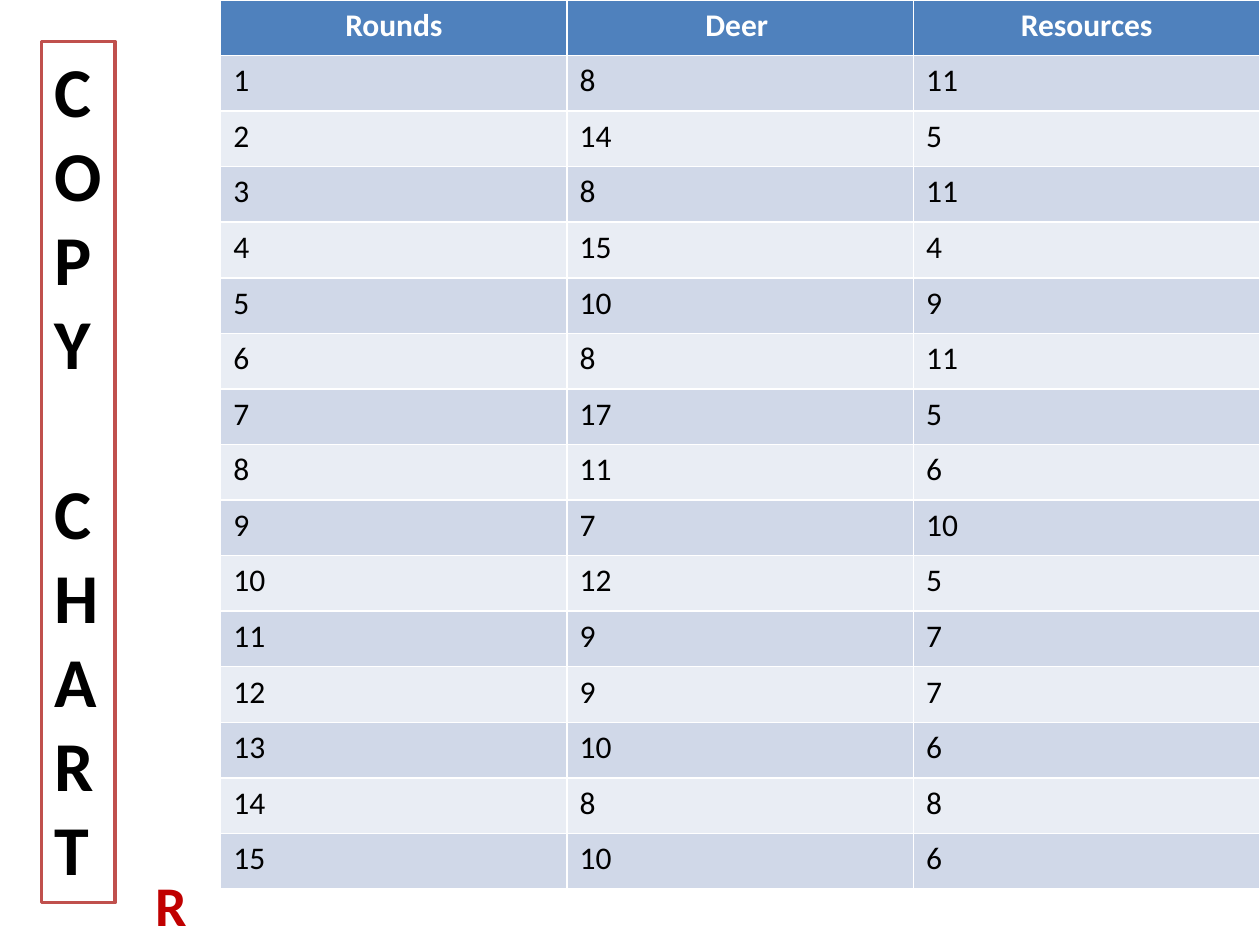
from pptx import Presentation
from pptx.dml.color import RGBColor
from pptx.enum.shapes import MSO_SHAPE
from pptx.enum.text import MSO_ANCHOR, MSO_AUTO_SIZE, PP_ALIGN
from pptx.util import Cm, Pt

RECT = MSO_SHAPE.RECTANGLE
TOP = MSO_ANCHOR.TOP
GROW = MSO_AUTO_SIZE.SHAPE_TO_FIT_TEXT
LEFT, MID = PP_ALIGN.LEFT, PP_ALIGN.CENTER

FONT = "Calibri"
HUES = {
    "head": "4F81BD",
    "odd": "D0D8E8",
    "even": "E9EDF4",
    "edge": "C0504D",
    "red": "C00000",
    "white": "FFFFFF",
    "black": "000000",
}
HEADS = ("Rounds", "Deer ", "Resources")
DEER = (8, 14, 8, 15, 10, 8, 17, 11, 7, 12, 9, 9, 10, 8, 10)
STOCK = (11, 5, 11, 4, 9, 11, 5, 6, 10, 5, 7, 7, 6, 8, 6)


def hue(name):
    return RGBColor.from_string(HUES[name])


def write(para, text, size=18, color="black", bold=False, align=LEFT, before=0):
    para.alignment = align
    para.space_before = Pt(before)
    run = para.add_run()
    run.text = text
    font = run.font
    font.name, font.size, font.bold = FONT, Pt(size), bold
    font.color.rgb = hue(color)


def add_grid(slide, left, top, width, height):
    rounds = range(1, len(DEER) + 1)
    rows = [HEADS, *zip(rounds, DEER, STOCK)]
    frame = slide.shapes.add_table(
        len(rows), len(HEADS), Cm(left), Cm(top), Cm(width), Cm(height)
    )
    for i, row in enumerate(rows):
        if i == 0:
            fill, look = "head", {"color": "white", "bold": True, "align": MID}
        else:
            fill, look = ("odd" if i % 2 else "even"), {}
        for j, value in enumerate(row):
            cell = frame.table.cell(i, j)
            cell.fill.solid()
            cell.fill.fore_color.rgb = hue(fill)
            write(cell.text_frame.paragraphs[0], str(value), **look)


def add_banner(slide, left, top, width, height, words):
    box = slide.shapes.add_shape(RECT, Cm(left), Cm(top), Cm(width), Cm(height))
    box.shadow.inherit = False
    box.fill.solid()
    box.fill.fore_color.rgb = hue("white")
    box.line.color.rgb = hue("edge")
    box.line.width = Pt(2)
    frame = box.text_frame
    frame.word_wrap = False
    frame.auto_size = GROW
    frame.vertical_anchor = TOP
    para = frame.paragraphs[0]
    for i, word in enumerate(words):
        for j, char in enumerate(word):
            if i or j:
                para = frame.add_paragraph()
            gap = 48.8 if i and j == 0 else 0
            write(para, char, size=40, bold=True, before=gap)


def add_mark(slide, left, top, width, height, text):
    box = slide.shapes.add_textbox(Cm(left), Cm(top), Cm(width), Cm(height))
    frame = box.text_frame
    frame.word_wrap = True
    frame.auto_size = GROW
    write(frame.paragraphs[0], text, size=32, color="red", bold=True, align=MID)


def main():
    deck = Presentation()
    deck.slide_width, deck.slide_height = Cm(25.4), Cm(19.05)
    slide = deck.slides.add_slide(deck.slide_layouts[6])
    add_grid(slide, 4.45, 0, 20.95, 17.92)
    add_banner(slide, 0.84, 0.84, 1.48, 17.36, ("COPY", "CHART"))
    add_mark(slide, 2.33, 17.43, 2.23, 1.62, "R")
    deck.save("out.pptx")


if __name__ == "__main__":
    main()
